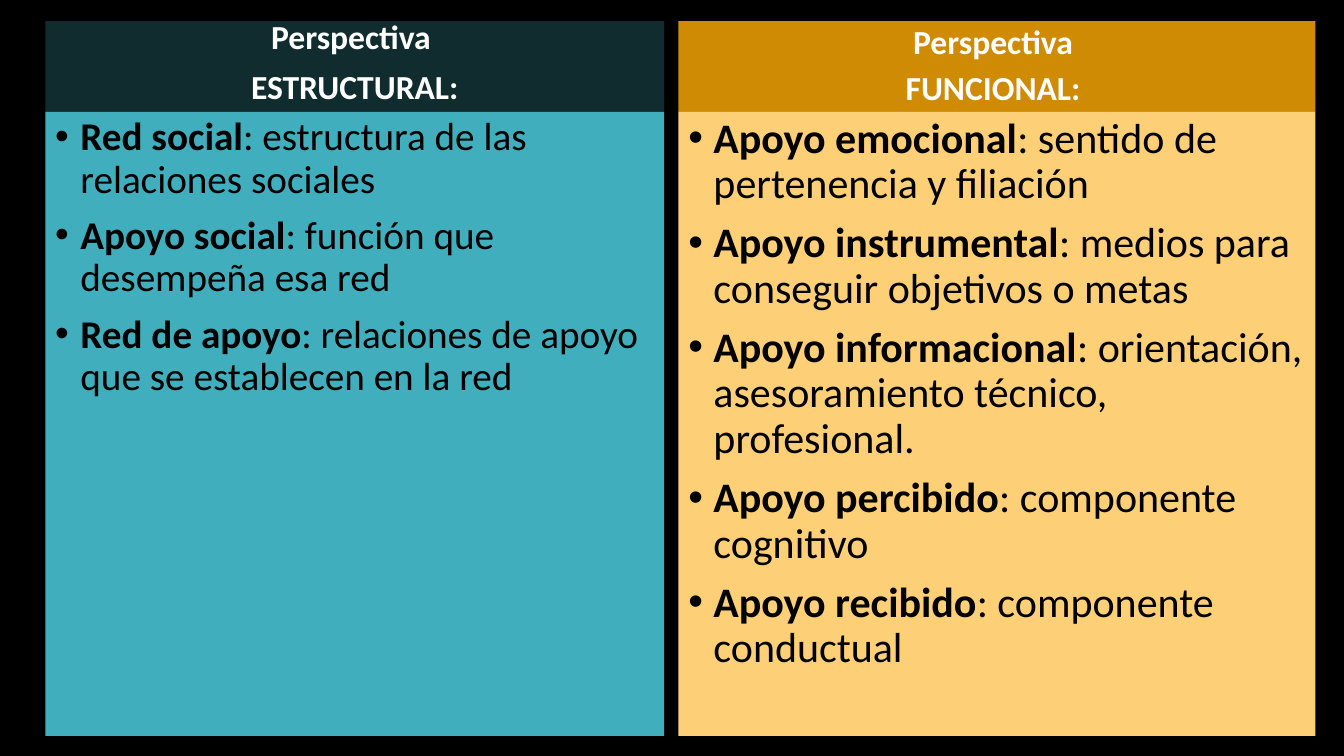
from dataclasses import dataclass

from lxml.etree import SubElement
from pptx import Presentation
from pptx.dml.color import RGBColor
from pptx.enum.shapes import MSO_SHAPE
from pptx.enum.text import MSO_ANCHOR, PP_ALIGN
from pptx.oxml.ns import qn
from pptx.slide import Slide
from pptx.util import Pt

TOP, HEAD_H, BODY_H = 15.12, 64.8, 445.68
INDENT = 18


@dataclass
class Column:
    left: float
    width: float
    head_fill: str
    body_fill: str
    head: list[str]
    head_spacing: float
    head_indent: float
    body_size: float
    items: list[tuple[str, str]]


@dataclass
class Panel:
    left: float
    top: float
    width: float
    height: float
    fill: str
    anchor: MSO_ANCHOR
    align: PP_ALIGN
    size: float
    color: str
    spacing: float
    indent: float
    bullet: bool
    lines: list[list[tuple[str, bool]]]


COLUMNS = [
    Column(32.4, 442.08, "102C2F", "41AEBD",
           ["Perspectiva ", "ESTRUCTURAL:"], 0.9, 0, 28, [
               ("Red social", ": estructura de las relaciones sociales"),
               ("Apoyo social", ": función que desempeña esa red"),
               ("Red de apoyo", ": relaciones de apoyo que se establecen en la red"),
           ]),
    Column(484.56, 455.04, "CF8B03", "FDD077",
           ["Perspectiva ", "FUNCIONAL: "], 0.8, INDENT, 30, [
               ("Apoyo emocional", ": sentido de pertenencia y filiación"),
               ("Apoyo instrumental", ": medios para conseguir objetivos o metas"),
               ("Apoyo informacional", ": orientación, asesoramiento técnico, profesional."),
               ("Apoyo percibido", ": componente cognitivo"),
               ("Apoyo recibido", ": componente conductual"),
           ]),
]


def rgb(value: str) -> RGBColor:
    return RGBColor.from_string(value)


def apply(target: object, values: dict) -> None:
    for name, value in values.items():
        setattr(target, name, value)


def draw_panel(s: Slide, panel: Panel) -> None:
    sp = s.shapes.add_shape(MSO_SHAPE.RECTANGLE, Pt(panel.left), Pt(panel.top),
                            Pt(panel.width), Pt(panel.height))
    sp.shadow.inherit = False
    sp.fill.solid()
    sp.fill.fore_color.rgb = rgb(panel.fill)
    sp.line.fill.background()
    tf = sp.text_frame
    apply(tf, {"word_wrap": True, "vertical_anchor": panel.anchor})
    for i, line in enumerate(panel.lines):
        p = tf.add_paragraph() if i else tf.paragraphs[0]
        apply(p, {"alignment": panel.align, "line_spacing": panel.spacing,
                  "space_before": Pt(10 if i else 0)})
        pPr = p._p.get_or_add_pPr()
        pPr.set("marL", str(Pt(panel.indent)))
        pPr.set("indent", str(-Pt(panel.indent)))
        if panel.bullet:
            SubElement(pPr, qn("a:buFont")).set("typeface", "Arial")
            SubElement(pPr, qn("a:buChar")).set("char", "•")
        for text, bold in line:
            r = p.add_run()
            r.text = text
            apply(r.font, {"name": "Calibri", "size": Pt(panel.size), "bold": bold})
            r.font.color.rgb = rgb(panel.color)


def draw_column(s: Slide, col: Column) -> None:
    draw_panel(s, Panel(
        col.left, TOP, col.width, HEAD_H, col.head_fill, MSO_ANCHOR.BOTTOM,
        PP_ALIGN.CENTER, 24, "FFFFFF", col.head_spacing, col.head_indent, False,
        [[(text, True)] for text in col.head]))
    draw_panel(s, Panel(
        col.left, TOP + HEAD_H, col.width, BODY_H, col.body_fill, MSO_ANCHOR.TOP,
        PP_ALIGN.LEFT, col.body_size, "000000", 0.9, INDENT, True,
        [[(term, True), (meaning, False)] for term, meaning in col.items]))


def main() -> None:
    prs = Presentation()
    apply(prs, {"slide_width": Pt(960), "slide_height": Pt(540)})
    s = prs.slides.add_slide(prs.slide_layouts[6])
    s.background.fill.solid()
    s.background.fill.fore_color.rgb = rgb("000000")
    for col in COLUMNS:
        draw_column(s, col)
    prs.save("out.pptx")


if __name__ == "__main__":
    main()
